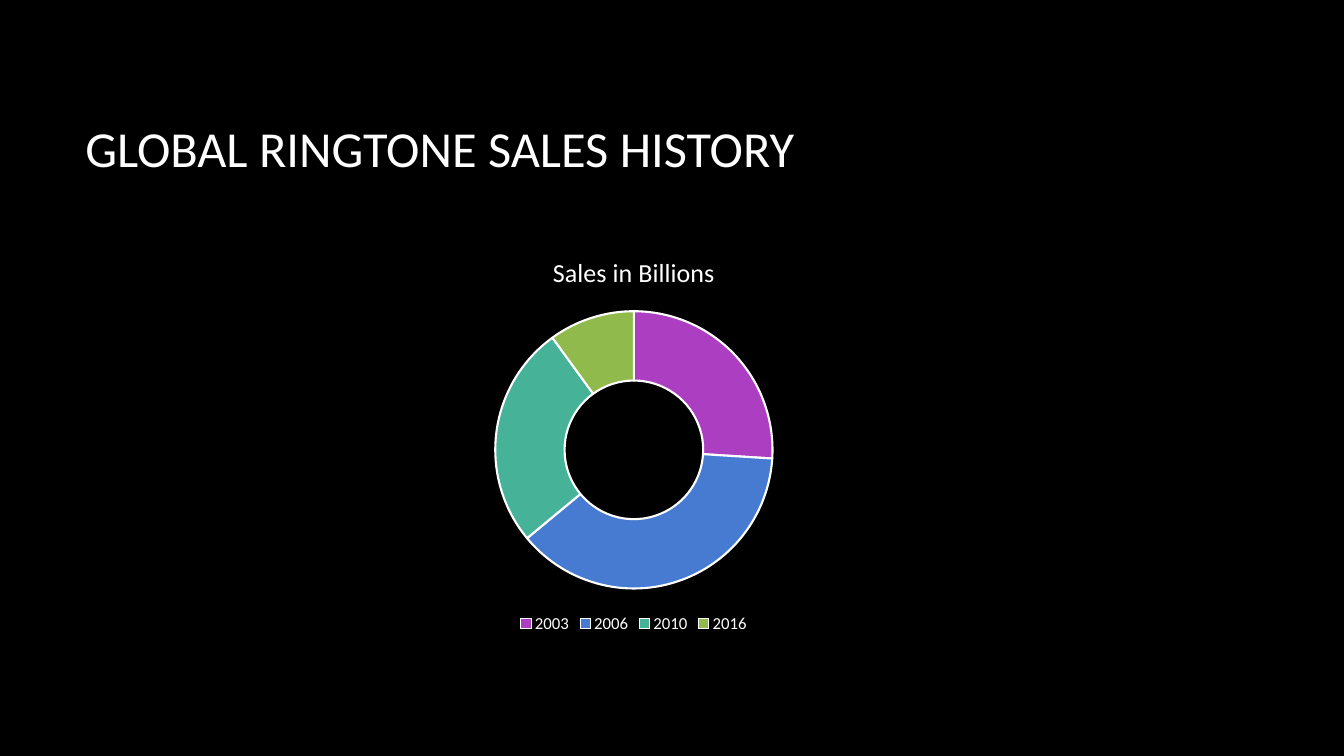
from pptx import Presentation
from pptx.chart.data import CategoryChartData
from pptx.dml.color import RGBColor
from pptx.enum.chart import XL_CHART_TYPE as ChartType, XL_LEGEND_POSITION as LegendPosition
from pptx.enum.text import MSO_ANCHOR as Anchor
from pptx.util import Cm, Pt

FONT = "Calibri"
COLORS = {
    "background": "000000",
    "text": "FFFFFF",
    "2003": "AC3EC1",
    "2006": "477BD1",
    "2010": "46B298",
    "2016": "90BA4C",
}
SALES = {"2003": 26, "2006": 38, "2010": 26, "2016": 10}


def color(name):
    return RGBColor.from_string(COLORS[name])


def style_font(font, size):
    font.name = FONT
    font.size = Pt(size)
    font.bold = False
    font.color.rgb = color("text")


def add_run(paragraph, text, size):
    run = paragraph.add_run()
    run.text = text
    style_font(run.font, size)


def add_title(slide, left, top, width, height):
    frame = slide.shapes.add_textbox(left, top, width, height).text_frame
    frame.word_wrap = True
    frame.vertical_anchor = Anchor.MIDDLE
    add_run(frame.paragraphs[0], "GLOBAL RINGTONE SALES HISTORY", 36)


def add_sales_chart(slide, left, top, width, height):
    data = CategoryChartData()
    data.categories = list(SALES)
    data.add_series("Sales in Billions", list(SALES.values()))
    chart = slide.shapes.add_chart(
        ChartType.DOUGHNUT, left, top, width, height, data).chart
    style_font(chart.font, 10)

    chart.has_title = True
    add_run(chart.chart_title.text_frame.paragraphs[0], "Sales in Billions", 18.6)
    chart.chart_title.include_in_layout = False

    chart.has_legend = True
    chart.legend.position = LegendPosition.BOTTOM
    chart.legend.include_in_layout = False
    style_font(chart.legend.font, 12)

    plot = chart.plots[0]
    plot.vary_by_categories = True
    plot._element.find("{*}holeSize").set("val", "75")
    for index, year in enumerate(SALES):
        slice_format = plot.series[0].points[index].format
        slice_format.fill.solid()
        slice_format.fill.fore_color.rgb = color(year)
        slice_format.line.color.rgb = color("text")
        slice_format.line.width = Pt(1.5)


def main():
    presentation = Presentation()
    presentation.slide_width = Cm(33.87)
    presentation.slide_height = Cm(19.05)
    slide = presentation.slides.add_slide(presentation.slide_layouts[6])
    slide.background.fill.solid()
    slide.background.fill.fore_color.rgb = color("background")

    left, width = Cm(1.9), Cm(28.15)
    add_title(slide, left, Cm(1.7), width, Cm(4.04))
    add_sales_chart(slide, left, Cm(5.94), width, Cm(10.13))
    presentation.save("out.pptx")


if __name__ == "__main__":
    main()
